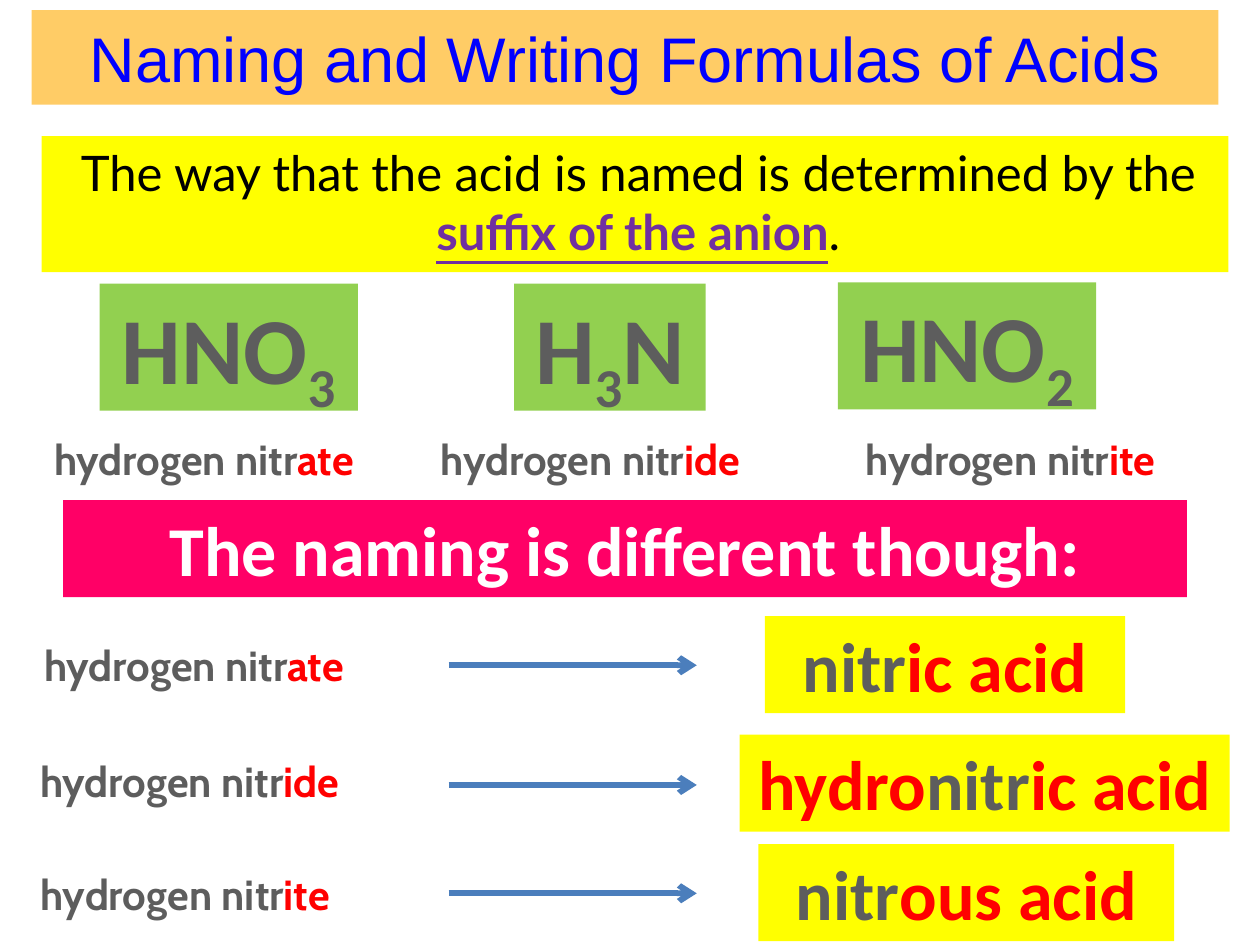
from dataclasses import dataclass
from typing import Optional

from lxml.etree import SubElement
from pptx import Presentation
from pptx.dml.color import RGBColor as Rgb
from pptx.enum.shapes import MSO_CONNECTOR as Link, MSO_SHAPE as Kind
from pptx.enum.text import MSO_ANCHOR as Anchor, MSO_AUTO_SIZE as Fit, PP_ALIGN as Align
from pptx.oxml.ns import qn
from pptx.util import Inches, Pt

HUES = {
    "gray": "5D5D5D", "red": "FF0000", "white": "FFFFFF", "black": "000000",
    "blue": "0000FF", "purple": "7030A0", "green": "92D050", "pink": "FF0066",
    "yellow": "FFFF00", "peach": "FFCC66", "steel": "4B7EBC",
}


@dataclass
class Bit:
    text: str
    hue: str = "gray"
    bold: bool = True
    under: bool = False
    sub: bool = False


@dataclass
class Box:
    left: float
    top: float
    width: float
    height: float
    bits: list[Bit]
    size: int
    font: str = "Calibri"
    fill: Optional[str] = None
    wrap: bool = False


def tint(hue: str) -> Rgb:
    return Rgb.from_string(HUES[hue])


def dress(shape, box: Box, anchor=Anchor.TOP) -> None:
    shape.left, shape.top = Inches(box.left), Inches(box.top)
    shape.width, shape.height = Inches(box.width), Inches(box.height)
    if box.fill:
        shape.fill.solid()
        shape.fill.fore_color.rgb = tint(box.fill)
    frame = shape.text_frame
    frame.word_wrap = box.wrap
    frame.auto_size = Fit.NONE
    frame.vertical_anchor = anchor
    para = frame.paragraphs[0]
    para.alignment = Align.CENTER
    for bit in box.bits:
        run = para.add_run()
        run.text = bit.text
        font = run.font
        font.name, font.size = box.font, Pt(box.size)
        font.bold, font.underline = bit.bold, bit.under
        font.color.rgb = tint(bit.hue)
        if bit.sub:
            run._r.get_or_add_rPr().set("baseline", "-25000")


def draw(slide, box: Box):
    area = [Inches(n) for n in (box.left, box.top, box.width, box.height)]
    if box.fill:
        shape = slide.shapes.add_shape(Kind.RECTANGLE, *area)
        shape.shadow.inherit = False
        shape.line.fill.background()
    else:
        shape = slide.shapes.add_textbox(*area)
    dress(shape, box)
    return shape


def arrow(slide, y: float) -> None:
    line = slide.shapes.add_connector(
        Link.STRAIGHT, Inches(3.56), Inches(y), Inches(5.53), Inches(y))
    line.line.color.rgb = tint("steel")
    line.line.width = Pt(3.25)
    SubElement(line.line._get_or_add_ln(), qn("a:tailEnd"), type="arrow")
    SubElement(line._element.spPr, qn("a:effectLst"))


def salt(left: float, top: float, end: str) -> Box:
    width = {"ate": 2.84, "ide": 2.71, "ite": 2.64}[end]
    bits = [Bit("hydrogen nitr"), Bit(end, "red")]
    return Box(left, top, width, 0.5, bits, 24, "Cabin")


def acid(left: float, top: float, width: float, bits: list[Bit]) -> Box:
    return Box(left, top, width, 0.77, bits, 40, fill="yellow")


def mole(left: float, top: float, width: float, bits: list[Bit]) -> Box:
    return Box(left, top, width, 1.01, bits, 54, fill="green")


TITLE = Box(0.25, 0.08, 9.42, 0.75,
            [Bit("Naming and Writing Formulas of Acids", "blue", False)],
            36, "Arial", "peach", True)
RULE = Box(0.33, 1.08, 9.42, 1.08, [
    Bit("The way that the acid is named is determined by the ", "black", False),
    Bit("suffix of the anion", "purple", under=True),
    Bit(".", "black", False),
], 28, "Lato", "yellow", True)
BOXES = [
    mole(0.79, 2.25, 2.05, [Bit("HNO"), Bit("3", sub=True)]),
    mole(4.08, 2.25, 1.52, [Bit("H"), Bit("3", sub=True), Bit("N")]),
    mole(6.65, 2.24, 2.05, [Bit("HNO"), Bit("2", sub=True)]),
    salt(0.2, 3.39, "ate"),
    salt(3.33, 3.39, "ide"),
    salt(6.7, 3.39, "ite"),
    Box(0.5, 3.97, 8.92, 0.77, [Bit("The naming is different though:", "white")],
        40, fill="pink", wrap=True),
    salt(0.12, 5.03, "ate"),
    salt(0.15, 5.95, "ide"),
    salt(0.15, 6.84, "ite"),
    acid(6.07, 4.89, 2.86, [Bit("nitr"), Bit("ic acid", "red")]),
    acid(5.87, 5.83, 3.89, [Bit("hydro", "red"), Bit("nitr"), Bit("ic acid", "red")]),
    acid(6.02, 6.7, 3.3, [Bit("nitr"), Bit("ous acid", "red")]),
]


def main() -> None:
    deck = Presentation()
    deck.slide_width, deck.slide_height = Inches(10), Inches(7.5)
    slide = deck.slides.add_slide(deck.slide_layouts[5])
    dress(slide.shapes.title, TITLE, Anchor.MIDDLE)
    rule = draw(slide, RULE)
    rule.text_frame.margin_left = Inches(0.15)
    for box in BOXES:
        draw(slide, box)
    for y in (5.28, 6.23, 7.09):
        arrow(slide, y)
    deck.save("out.pptx")


if __name__ == "__main__":
    main()
